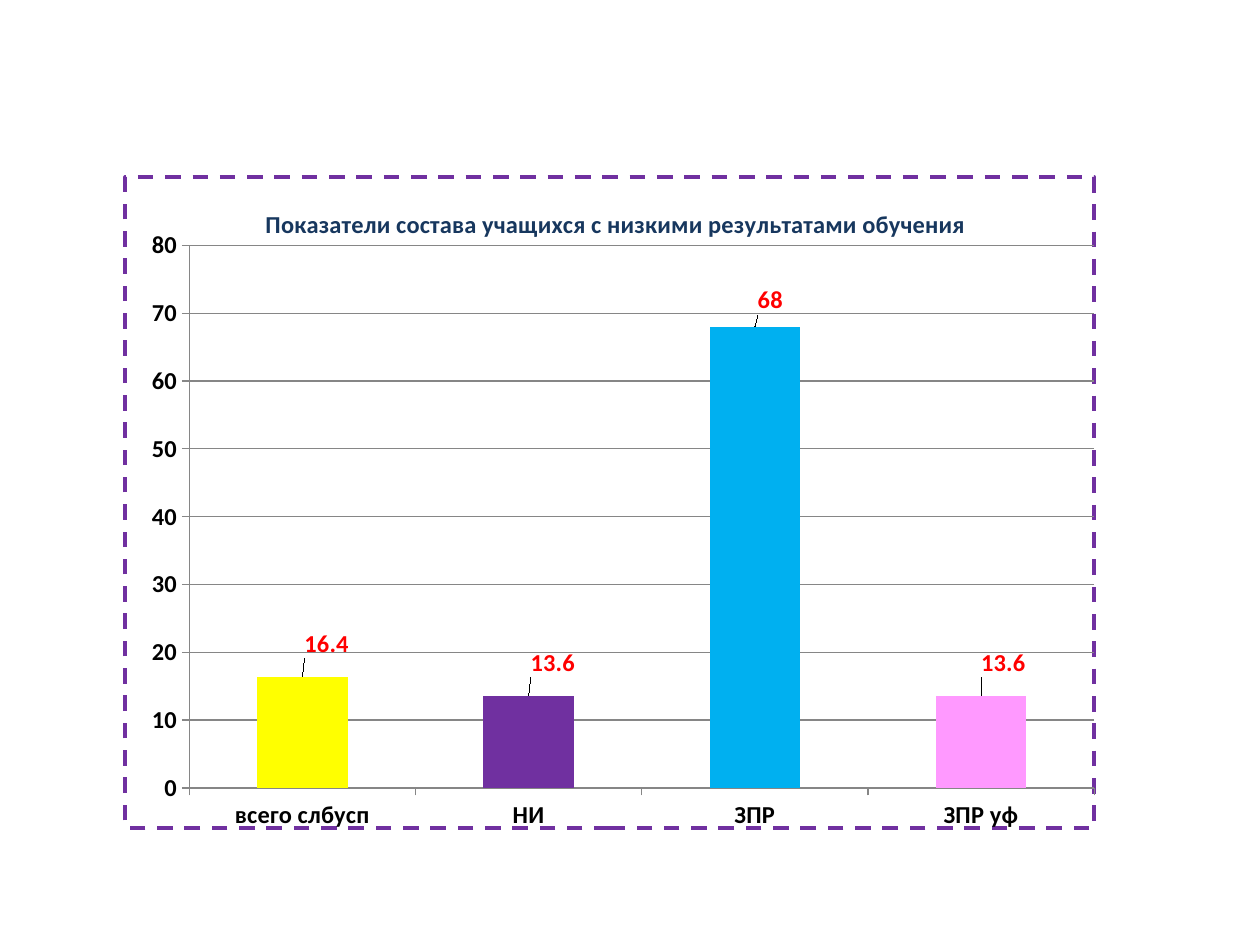
from pptx import Presentation
from pptx.chart.data import CategoryChartData
from pptx.dml.color import RGBColor
from pptx.enum.chart import XL_CHART_TYPE, XL_LABEL_POSITION, XL_TICK_MARK
from pptx.oxml import parse_xml
from pptx.oxml.ns import nsdecls, qn
from pptx.util import Inches, Pt

TITLE = "Показатели состава учащихся с низкими результатами обучения"
# category, value, bar colour, label shift as shares of the chart
BARS = [
    ("всего слбусп", 16.4, "FFFF00", (0.025, -0.02)),
    ("НИ", 13.6, "7030A0", (0.025, -0.02)),
    ("ЗПР", 68, "00B0F0", (0.016, -0.01)),
    ("ЗПР уф", 13.6, "FF99FF", (0.023, -0.02)),
]


def color(code):
    return RGBColor.from_string(code)


def style_font(font, size=14, bold=True, code="000000"):
    font.name, font.size, font.bold = "Calibri", Pt(size), bold
    font.color.rgb = color(code)


def style_line(line, code="868686", width=0.75):
    line.color.rgb = color(code)
    line.width = Pt(width)


def set_layout(parent, index, modes=(), **shares):
    """Place a chart part by shares of the chart's size."""
    for old in parent.findall(qn("c:layout")):
        parent.remove(old)
    values = [(mode, "edge") for mode in modes if mode != "layoutTarget"]
    if "layoutTarget" in modes:
        values.insert(0, ("layoutTarget", "inner"))
    values += shares.items()
    parts = "".join(f'<c:{name} val="{value}"/>' for name, value in values)
    parent.insert(index, parse_xml(
        f'<c:layout {nsdecls("c")}><c:manualLayout>{parts}</c:manualLayout></c:layout>'))


def add_border(chart, code, width):
    chart.element.find(qn("c:chart")).addnext(parse_xml(
        f'<c:spPr {nsdecls("c", "a")}><a:noFill/><a:ln w="{Pt(width)}">'
        f'<a:solidFill><a:srgbClr val="{code}"/></a:solidFill>'
        '<a:prstDash val="dash"/></a:ln></c:spPr>'))


def style_title(chart):
    frame = chart.chart_title.text_frame
    frame.text = TITLE
    style_font(frame.paragraphs[0].runs[0].font, code="17375E")
    title = chart.element.find(".//" + qn("c:title"))
    set_layout(title, 1, ("xMode", "yMode"), x=0.14, y=0.04)


def style_axes(chart):
    for axis in (chart.category_axis, chart.value_axis):
        style_font(axis.tick_labels.font)
        style_line(axis.format.line)
        axis.major_tick_mark = XL_TICK_MARK.OUTSIDE
        axis.minor_tick_mark = XL_TICK_MARK.NONE
    values = chart.value_axis
    values.minimum_scale, values.maximum_scale, values.major_unit = 0, 80, 10
    values.has_major_gridlines = True
    style_line(values.major_gridlines.format.line)


def style_bars(chart):
    plot = chart.plots[0]
    plot.gap_width = 150
    plot.vary_by_categories = False
    series = plot.series[0]
    series.format.fill.solid()
    series.format.fill.fore_color.rgb = color("4F81BD")
    for index, (_, _, code, _) in enumerate(BARS):
        point = series.points[index]
        point.format.fill.solid()
        point.format.fill.fore_color.rgb = color(code)
        style_font(point.data_label.font, code="FF0000")
        point.data_label.position = XL_LABEL_POSITION.OUTSIDE_END
    labels = chart.element.iter(qn("c:dLbl"))
    for label, (_, _, _, (x, y)) in zip(list(labels), BARS):
        set_layout(label, 1, x=x, y=y)


def add_results_chart(page, left, top, width, height):
    data = CategoryChartData()
    data.categories = [bar[0] for bar in BARS]
    data.add_series("Series 1", [bar[1] for bar in BARS])
    chart = page.shapes.add_chart(
        XL_CHART_TYPE.COLUMN_CLUSTERED, left, top, width, height, data).chart
    style_font(chart.font, size=10, bold=False)
    chart.has_legend = False
    style_title(chart)
    style_axes(chart)
    style_bars(chart)
    set_layout(chart.element.find(".//" + qn("c:plotArea")), 0,
               ("layoutTarget", "xMode", "yMode"),
               x=0.066, y=0.105, w=0.934, h=0.834)
    add_border(chart, "7030A0", 2.25)


def main():
    deck = Presentation()
    deck.slide_width, deck.slide_height = Inches(10), Inches(7.5)
    page = deck.slides.add_slide(deck.slide_layouts[6])
    add_results_chart(page, Inches(0.98), Inches(1.39), Inches(7.72), Inches(5.2))
    deck.save("out.pptx")


if __name__ == "__main__":
    main()
